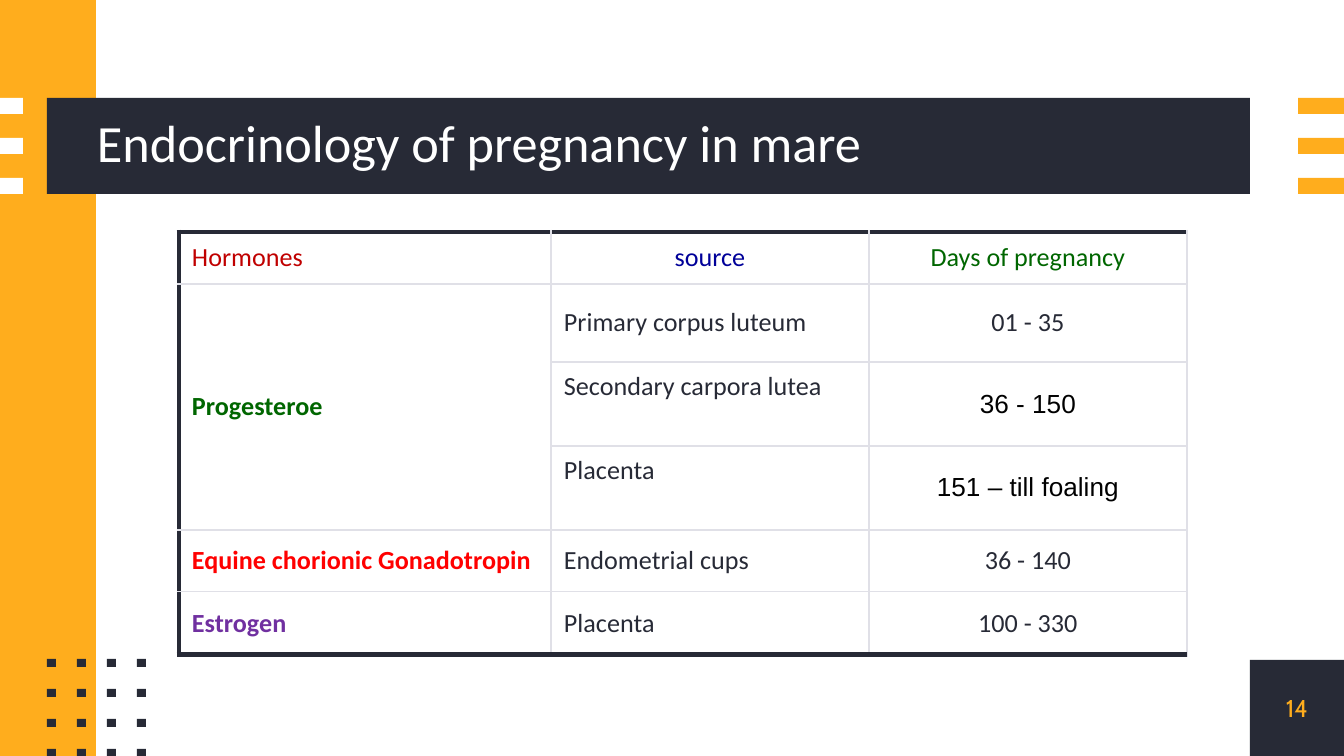
from typing import NamedTuple

from pptx import Presentation
from pptx.dml.color import RGBColor
from pptx.enum.shapes import MSO_SHAPE as Kind
from pptx.enum.text import MSO_ANCHOR as Anchor, MSO_AUTO_SIZE as Auto, PP_ALIGN as Align
from pptx.oxml.ns import qn
from pptx.util import Emu, Pt
from lxml.etree import SubElement as Sub

SCALE = 914400 / 134.4  # EMU in one px
DARK, GOLD, WHITE, GRID = "272A36", "FFAD1D", "FFFFFF", "E0E0E7"


class Box(NamedTuple):
    x: int
    y: int
    w: int
    h: int


class Item(NamedTuple):
    text: str
    color: str = DARK
    align: Align = Align.LEFT
    bold: bool = False
    font: str = "Calibri"
    anchor: Anchor = Anchor.MIDDLE


def px(n: int) -> Emu:
    return Emu(round(n * SCALE))


def rgb(code: str) -> RGBColor:
    return RGBColor.from_string(code)


def rect(slide, box: Box, color: str) -> None:
    shape = slide.shapes.add_shape(Kind.RECTANGLE, *map(px, box))
    shape.shadow.inherit = False
    shape.fill.solid()
    shape.fill.fore_color.rgb = rgb(color)
    shape.line.fill.background()


def style(para, size: int, item: Item) -> None:
    para.alignment = item.align
    font = para.font
    font.size, font.name, font.bold = Pt(size), item.font, item.bold
    font.color.rgb = rgb(item.color)


def label(shape, box: Box, size: int, item: Item) -> None:
    shape.left, shape.top, shape.width, shape.height = map(px, box)
    frame = shape.text_frame
    frame.word_wrap, frame.auto_size = True, Auto.NONE
    frame.vertical_anchor = item.anchor
    frame.margin_left = frame.margin_right = 0
    frame.margin_top = frame.margin_bottom = 0
    frame.text = item.text
    style(frame.paragraphs[0], size, item)


def edge(cell, side: str, thick: bool) -> None:
    width = Pt(3) if thick else Pt(0.75)
    line = Sub(cell._tc.get_or_add_tcPr(), qn(f"a:ln{side}"), w=str(width))
    fill = Sub(line, qn("a:solidFill"))
    Sub(fill, qn("a:srgbClr"), val=DARK if thick else GRID)


def fill_in(cell, item: Item) -> None:
    cell.margin_left = cell.margin_right = px(13)
    cell.margin_top = cell.margin_bottom = px(9)
    cell.vertical_anchor = item.anchor
    cell.text = item.text
    style(cell.text_frame.paragraphs[0], 14, item)


def name(text: str, color: str) -> Item:
    return Item(text, color, bold=True)


def days(text: str) -> Item:
    return Item(text, align=Align.CENTER)


def plain(text: str) -> Item:
    return Item(text, "000000", Align.CENTER, font="Arial")


def high(text: str) -> Item:
    return Item(text, anchor=Anchor.TOP)


COLS = [372, 318, 318]
ROWS = [52, 78, 84, 84, 62, 63]
CELLS = [
    [Item("Hormones", "C00000"), Item("source", "000099", Align.CENTER),
     Item("Days of pregnancy", "006600", Align.CENTER)],
    [name("Progesteroe", "006600"), Item("Primary corpus luteum"), days("01 - 35")],
    [None, high("Secondary carpora lutea"), plain("36 - 150")],
    [None, high("Placenta"), plain("151 – till foaling")],
    [name("Equine chorionic Gonadotropin", "FF0000"), Item("Endometrial cups"),
     days("36 - 140")],
    [name("Estrogen", "7030A0"), Item("Placenta"), days("100 - 330")],
]


def add_grid(slide, x: int, y: int) -> None:
    box = Box(x, y, sum(COLS), sum(ROWS))
    table = slide.shapes.add_table(len(ROWS), len(COLS), *map(px, box)).table
    table.first_row = table.horz_banding = False
    for col, w in zip(table.columns, COLS):
        col.width = px(w)
    for row, h in zip(table.rows, ROWS):
        row.height = px(h)
    for r, items in enumerate(CELLS):
        for c, item in enumerate(items):
            cell = table.cell(r, c)
            if item:
                fill_in(cell, item)
            edge(cell, "L", c == 0)
            edge(cell, "R", False)
            edge(cell, "T", r == 0)
            edge(cell, "B", r == len(ROWS) - 1)
            cell.fill.background()
    table.cell(1, 0).merge(table.cell(3, 0))


def main() -> None:
    deck = Presentation()
    deck.slide_width, deck.slide_height = px(1344), px(756)
    slide = deck.slides.add_slide(deck.slide_layouts[5])

    # Side band, title bar and page corner
    corner = Box(1250, 660, 94, 96)
    rect(slide, corner, DARK)
    rect(slide, Box(0, 0, 96, 756), GOLD)
    rect(slide, Box(47, 98, 1203, 96), DARK)

    # Stripes at both ends of the title bar
    for i in range(3):
        y = 98 + 40 * i
        rect(slide, Box(0, y, 23, 16), WHITE)
        rect(slide, Box(1298, y, 46, 16), GOLD)

    # Dot grid
    for i in range(4):
        for j in range(4):
            rect(slide, Box(47 + 30 * i, 659 + 30 * j, 9, 8), DARK)

    # Title, raised above the bar
    title = slide.shapes.title
    label(title, Box(97, 98, 1153, 96), 28,
          Item("Endocrinology of pregnancy in mare", WHITE))
    title.text_frame.paragraphs[0].line_spacing = 0.9
    slide.shapes._spTree.append(title._element)

    # Hormone table
    add_grid(slide, 179, 232)

    # Page number
    page = slide.shapes.add_textbox(0, 0, 0, 0)
    label(page, corner, 13, Item("14", GOLD, Align.CENTER, font="Cabin"))

    deck.save("out.pptx")


if __name__ == "__main__":
    main()
